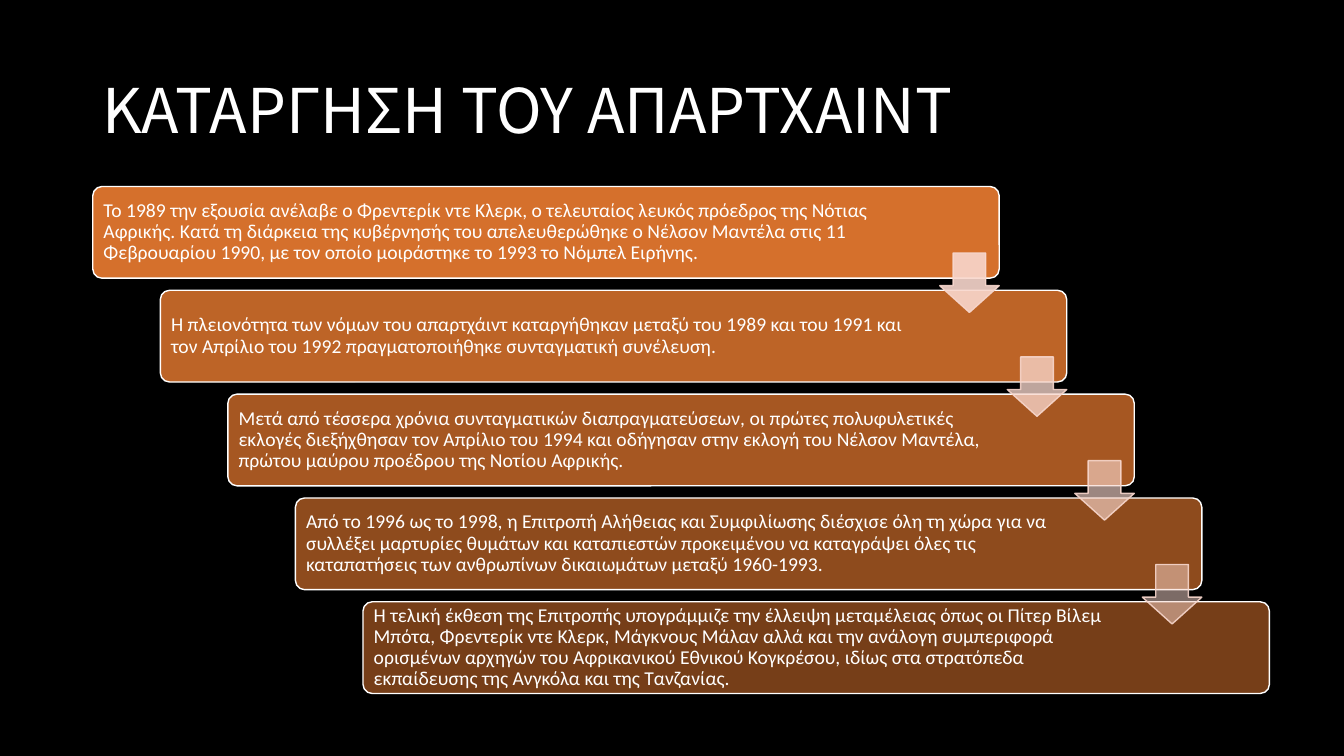
from lxml.etree import SubElement
from pptx import Presentation
from pptx.dml.color import RGBColor
from pptx.enum.shapes import MSO_SHAPE as SHAPE
from pptx.enum.text import MSO_ANCHOR as ANCHOR, MSO_AUTO_SIZE as AUTOSIZE, PP_ALIGN as ALIGN
from pptx.oxml.ns import qn
from pptx.util import Inches, Pt

BLACK = RGBColor(0x00, 0x00, 0x00)
WHITE = RGBColor(0xFF, 0xFF, 0xFF)
ORANGE = RGBColor(0xED, 0x7D, 0x31)
PINK = RGBColor(0xF8, 0xD7, 0xCD)

TITLE = "ΚΑΤΑΡΓΗΣΗ ΤΟΥ ΑΠΑΡΤΧΑΙΝΤ"
STEPS = [
    "Το 1989 την εξουσία ανέλαβε ο Φρεντερίκ ντε Κλερκ, ο τελευταίος λευκός πρόεδρος της "
    "Νότιας Αφρικής. Κατά τη διάρκεια της κυβέρνησής του απελευθερώθηκε ο Νέλσον Μαντέλα "
    "στις 11 Φεβρουαρίου 1990, με τον οποίο μοιράστηκε το 1993 το Νόμπελ Ειρήνης.",
    "Η πλειονότητα των νόμων του απαρτχάιντ καταργήθηκαν μεταξύ του 1989 και του 1991 και "
    "τον Απρίλιο του 1992 πραγματοποιήθηκε συνταγματική συνέλευση.",
    "Μετά από τέσσερα χρόνια συνταγματικών διαπραγματεύσεων, οι πρώτες πολυφυλετικές "
    "εκλογές διεξήχθησαν τον Απρίλιο του 1994 και οδήγησαν στην εκλογή του Νέλσον Μαντέλα, "
    "πρώτου μαύρου προέδρου της Νοτίου Αφρικής.",
    "Από το 1996 ως το 1998, η Επιτροπή Αλήθειας και Συμφιλίωσης διέσχισε όλη τη χώρα για "
    "να συλλέξει μαρτυρίες θυμάτων και καταπιεστών προκειμένου να καταγράψει όλες τις "
    "καταπατήσεις των ανθρωπίνων δικαιωμάτων μεταξύ 1960-1993.",
    "Η τελική έκθεση της Επιτροπής υπογράμμιζε την έλλειψη μεταμέλειας όπως οι Πίτερ Βίλεμ "
    "Μπότα, Φρεντερίκ ντε Κλερκ, Μάγκνους Μάλαν αλλά και την ανάλογη συμπεριφορά ορισμένων "
    "αρχηγών του Αφρικανικού Εθνικού Κογκρέσου, ιδίως στα στρατόπεδα εκπαίδευσης της "
    "Ανγκόλα και της Τανζανίας.",
]
ARROW_OPACITY = [90, 77, 63, 50]

LEFT, TOP = 0.92, 1.85
STEP_X, STEP_Y = 0.67, 1.03
BOX_W, BOX_H = 8.99, 0.91
ARROW = 0.59


class StaircaseSlide:
    title_font = "Noto Sans CJK JP"
    body_font = "Calibri"

    def __init__(self, prs):
        self.s = prs.slides.add_slide(prs.slide_layouts[5])
        self.s.background.fill.solid()
        self.s.background.fill.fore_color.rgb = BLACK

    def set_text(self, tf, text, font, size):
        tf.text = text
        tf.word_wrap = True
        tf.auto_size = AUTOSIZE.NONE
        tf.vertical_anchor = ANCHOR.MIDDLE
        p = tf.paragraphs[0]
        p.alignment = ALIGN.LEFT
        p.line_spacing = 0.9
        r = p.runs[0]
        r.font.name, r.font.size, r.font.color.rgb = font, Pt(size), WHITE
        for tag in ("a:ea", "a:cs"):
            SubElement(r.font._element, qn(tag), typeface=font)

    def paint(self, fill, color, opacity):
        """Fill with a solid colour at the given opacity in percent."""
        fill.solid()
        fill.fore_color.rgb = color
        srgb = fill._xPr.find(qn("a:solidFill"))[0]
        SubElement(srgb, qn("a:alpha"), val=str(opacity * 1000))

    def shape(self, kind, x, y, w, h, adjustments, color, opacity):
        sp = self.s.shapes.add_shape(kind, Inches(x), Inches(y), Inches(w), Inches(h))
        sp.shadow.inherit = False
        for i, value in enumerate(adjustments):
            sp.adjustments[i] = value
        self.paint(sp.fill, color, opacity)
        sp.line.width = Pt(1)
        return sp

    def title(self, text):
        sp = self.s.shapes.title
        sp.left, sp.top = Inches(0.92), Inches(0.4)
        sp.width, sp.height = Inches(11.5), Inches(1.45)
        self.set_text(sp.text_frame, text, self.title_font, 44)

    def box(self, x, y, text, opacity, right_inset):
        sp = self.shape(SHAPE.ROUNDED_RECTANGLE, x, y, BOX_W, BOX_H, [0.1], ORANGE, opacity)
        sp.line.color.rgb = WHITE
        tf = sp.text_frame
        self.set_text(tf, text, self.body_font, 14)
        tf.paragraphs[0].space_after = Pt(6)
        tf.margin_left = tf.margin_top = tf.margin_bottom = Inches(0.08)
        tf.margin_right = Inches(right_inset)

    def arrow(self, x, y, opacity):
        sp = self.shape(SHAPE.DOWN_ARROW, x, y, ARROW, ARROW, [0.55, 0.45], PINK, opacity)
        self.paint(sp.line.fill, PINK, 90)


def main():
    prs = Presentation()
    prs.slide_width, prs.slide_height = Inches(13.33), Inches(7.5)
    slide = StaircaseSlide(prs)
    slide.title(TITLE)
    for i, text in enumerate(STEPS):
        slide.box(LEFT + i * STEP_X, TOP + i * STEP_Y, text,
                  opacity=90 - 10 * i, right_inset=1.34 if i else 1.11)
    for i, opacity in enumerate(ARROW_OPACITY):
        slide.arrow(LEFT + i * STEP_X + BOX_W - ARROW, TOP + i * STEP_Y + 0.66, opacity)
    prs.save("out.pptx")


if __name__ == "__main__":
    main()
